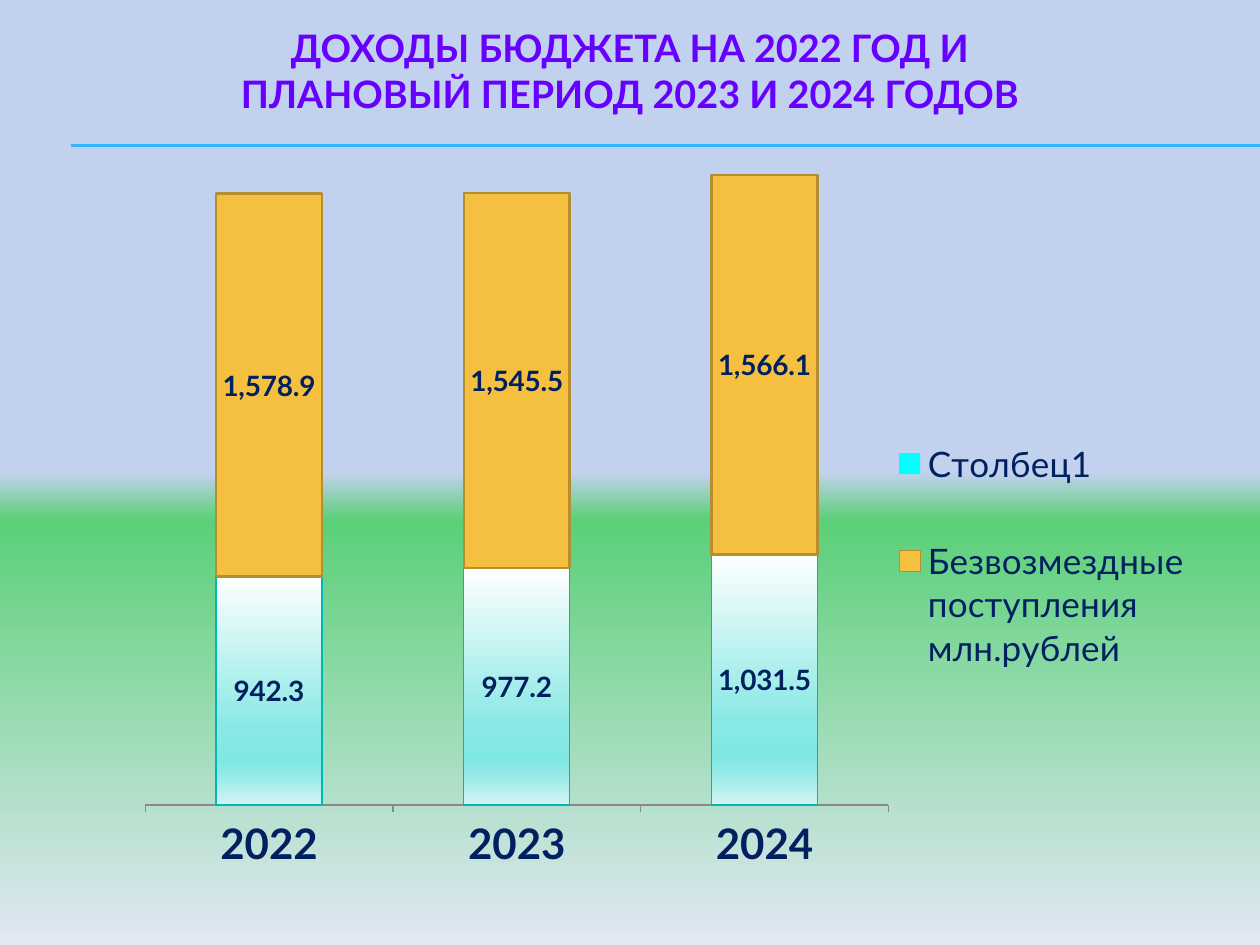
from lxml.etree import SubElement
from pptx import Presentation
from pptx.chart.data import CategoryChartData
from pptx.dml.color import RGBColor
from pptx.enum.chart import (XL_CHART_TYPE as Chart, XL_LEGEND_POSITION as Legend,
                             XL_TICK_LABEL_POSITION as TickLabel, XL_TICK_MARK as Tick)
from pptx.enum.shapes import MSO_CONNECTOR as Connector
from pptx.enum.text import MSO_ANCHOR as Anchor, PP_ALIGN as Align
from pptx.oxml import parse_xml
from pptx.oxml.ns import nsdecls, qn
from pptx.util import Inches, Pt

FONT = "Lato"
NAVY = "002060"
NUMBER = "#,##0.0"
YEARS = ["2022", "2023", "2024"]
SERIES = [
    ("Series 1", [942.3, 977.2, 1031.5]),
    ("Безвозмездные поступления млн.рублей", [1578.9, 1545.5, 1566.1]),
    ("Столбец1", [None, None, None]),
]
BACKGROUND = [(50, "C2D1ED"), (55, "5BD078"), (100, "E1E8F5")]
AQUA = [(0, "FEFFFF"), (68, "87E8E4"), (81, "81E7E3"), (86, "90E9E5"), (100, "D3F5F3")]


def rgb(value):
    return RGBColor.from_string(value)


def set_font(font, size, color, bold=False):
    for name, value in {"name": FONT, "size": Pt(size), "bold": bold}.items():
        setattr(font, name, value)
    font.color.rgb = rgb(color)


def set_gradient(fill, owner, stops):
    """Fill from top to bottom; owner is the XML element that holds the fill."""
    fill.gradient()
    fill.gradient_angle = 270
    stop_list = next(owner.iter(qn("a:gsLst")))
    for old in list(stop_list):
        stop_list.remove(old)
    for position, color in stops:
        stop = SubElement(stop_list, qn("a:gs"), pos=str(position * 1000))
        SubElement(stop, qn("a:srgbClr"), val=color)


def layout_xml(x, y, w, h, inner=False):
    target = '<c:layoutTarget val="inner"/>' if inner else ""
    modes = '<c:xMode val="edge"/><c:yMode val="edge"/>'
    sizes = "".join(f'<c:{k} val="{v}"/>' for k, v in zip("xywh", (x, y, w, h)))
    return parse_xml(f'<c:layout {nsdecls("c")}><c:manualLayout>{target}{modes}{sizes}'
                     "</c:manualLayout></c:layout>")


def set_layout(parent, layout, after=None):
    """Replace the layout of a chart part, right after a given child or first."""
    for old in parent.findall(qn("c:layout")):
        parent.remove(old)
    parent.insert(0 if after is None else parent.index(after) + 1, layout)


def add_title(slide, x, y, w, h):
    tf = slide.shapes.add_textbox(x, y, w, h).text_frame
    tf.word_wrap = True
    tf.vertical_anchor = Anchor.TOP
    for side in ("left", "right", "top", "bottom"):
        setattr(tf, f"margin_{side}", 0)
    p = tf.paragraphs[0]
    p.text = "ДОХОДЫ БЮДЖЕТА НА 2022 ГОД И\vПЛАНОВЫЙ ПЕРИОД 2023 И 2024 ГОДОВ"
    p.alignment = Align.CENTER
    for r in p.runs:
        set_font(r.font, 21.6, "6600FF", True)


def add_rule(slide, x, y, w):
    line = slide.shapes.add_connector(Connector.STRAIGHT, x, y, x + w, y)
    line.line.color.rgb = rgb("31B6FD")
    line.line.width = Pt(0.75)
    SubElement(line._element.spPr, qn("a:effectLst"))


def style_series(plot):
    own, transfers, extra = plot.series
    set_gradient(own.format.fill, own._element, AQUA)
    for s, color in ((transfers, "F5C040"), (extra, "00FFFF")):
        s.format.fill.solid()
        s.format.fill.fore_color.rgb = rgb(color)
    for s, color, width in ((own, "00B7B3", 0.75), (transfers, "B58E2F", 1.5)):
        s.format.line.color.rgb = rgb(color)
        s.format.line.width = Pt(width)
        labels = s.data_labels
        labels.show_value = True
        labels.number_format = NUMBER
        labels.number_format_is_linked = False
        set_font(labels.font, 16, NAVY, True)


def style_axes(chart):
    years, values = chart.category_axis, chart.value_axis
    years.major_tick_mark = Tick.OUTSIDE
    years.tick_label_position = TickLabel.LOW
    years.format.line.color.rgb = rgb("898989")
    set_font(years.tick_labels.font, 24, NAVY, True)
    settings = {"visible": False, "has_major_gridlines": False,
                "minimum_scale": 0, "maximum_scale": 2622}
    for name, value in settings.items():
        setattr(values, name, value)


def style_legend(chart):
    chart.has_legend = True
    legend = chart.legend
    legend.position = Legend.RIGHT
    legend.include_in_layout = False
    set_font(legend.font, 20, NAVY)
    # The first series has no legend entry
    entry = parse_xml(f'<c:legendEntry {nsdecls("c")}><c:idx val="0"/>'
                      '<c:delete val="1"/></c:legendEntry>')
    legend._element.find(qn("c:legendPos")).addnext(entry)
    set_layout(legend._element, layout_xml(0.72, 0.34, 0.28, 0.45), entry)


def add_income_chart(slide, x, y, w, h):
    data = CategoryChartData(number_format=NUMBER)
    data.categories = YEARS
    for name, values in SERIES:
        data.add_series(name, values)
    chart = slide.shapes.add_chart(Chart.COLUMN_STACKED, x, y, w, h, data).chart
    chart.has_title = False
    set_font(chart.font, 9.7, "000000")
    plot = chart.plots[0]
    for name, value in {"gap_width": 134, "overlap": 100, "vary_by_categories": False}.items():
        setattr(plot, name, value)
    style_series(plot)
    style_axes(chart)
    style_legend(chart)
    plot_area = next(chart.element.iter(qn("c:plotArea")))
    set_layout(plot_area, layout_xml(0.046, 0.046, 0.675, 0.854, inner=True))


def main():
    prs = Presentation()
    prs.slide_width, prs.slide_height = Inches(10), Inches(7.5)
    slide = prs.slides.add_slide(prs.slide_layouts[6])
    set_gradient(slide.background.fill, slide.element, BACKGROUND)

    # Double rule under the title
    for y in (1.15, 1.16):
        add_rule(slide, Inches(0.56), Inches(y), Inches(9.44))
    add_title(slide, Inches(0.5), Inches(0.2), Inches(9), Inches(0.9))
    add_income_chart(slide, Inches(0.75), Inches(1.07), Inches(8.74), Inches(5.91))
    prs.save("out.pptx")


if __name__ == "__main__":
    main()
